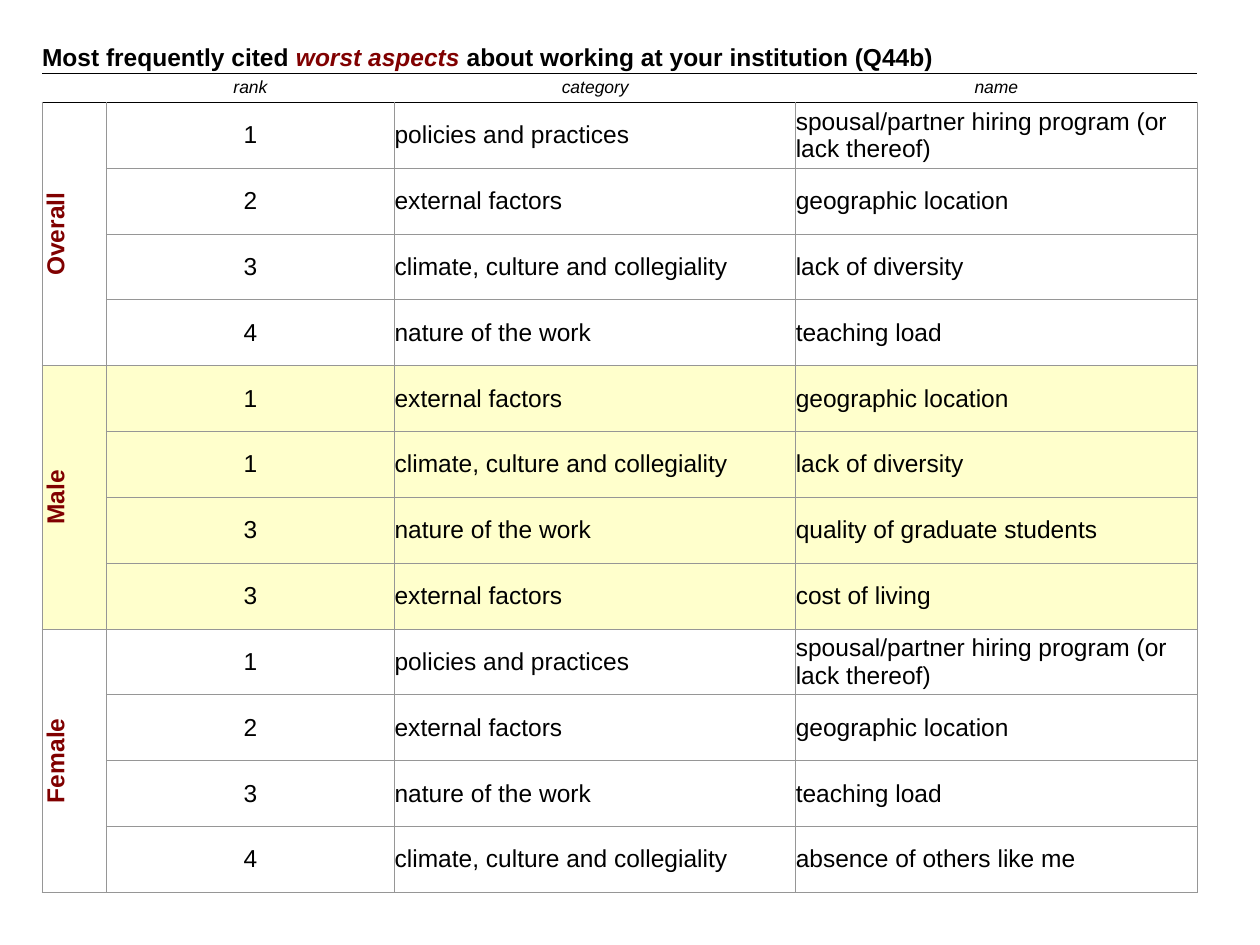
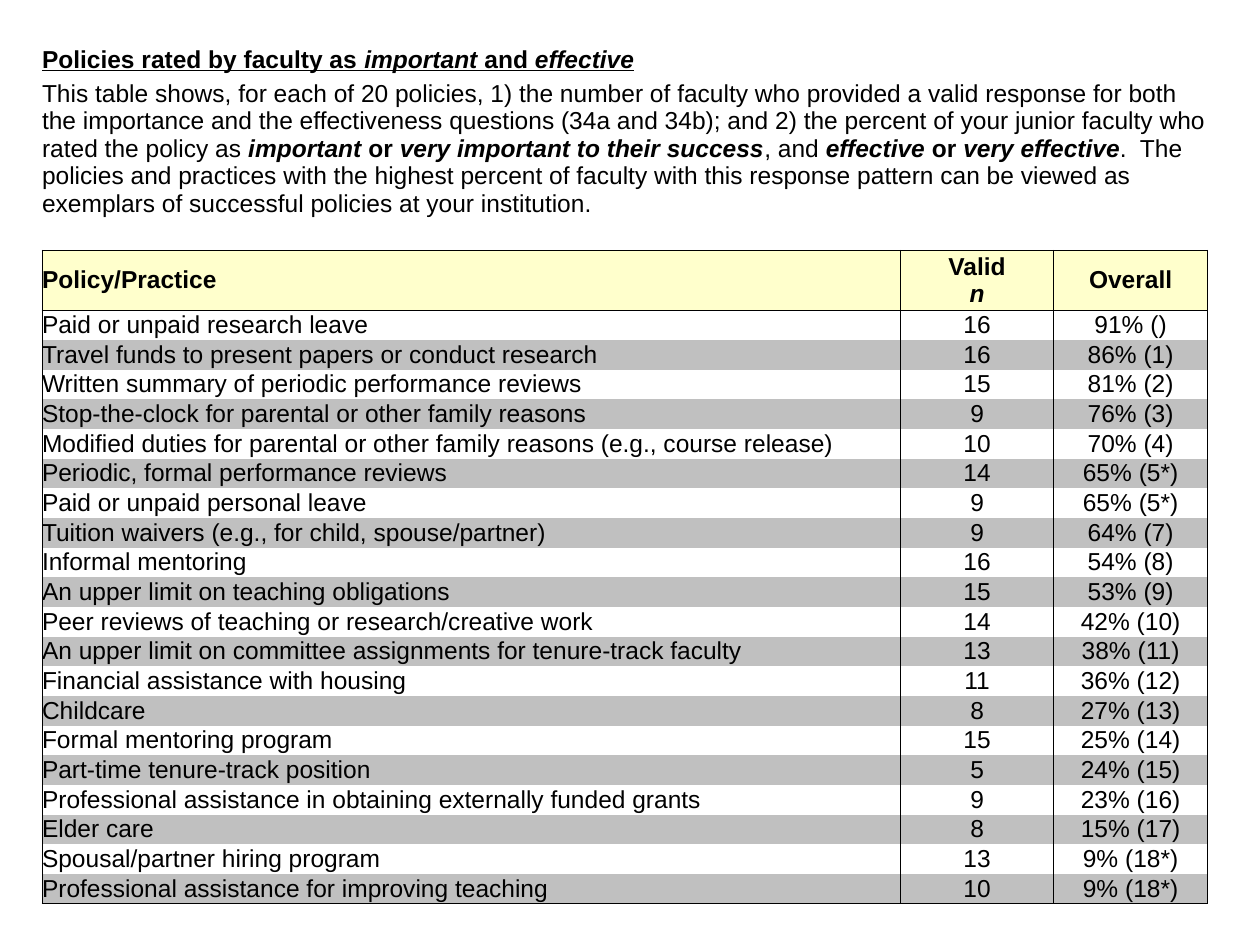
from dataclasses import dataclass, field

from lxml import etree
from pptx import Presentation
from pptx import util as u
from pptx.dml import color
from pptx.enum import text
from pptx.oxml import ns


@dataclass(frozen=True)
class Theme:
    font: str = "Arial"
    black: str = "000000"
    maroon: str = "800000"
    rule: str = "969696"
    cream: str = "FFFFCC"
    band: str = "C0C0C0"
    body: float = 14
    small: float = 10
    line: float = 0.5
    margin: float = 24
    style: str = "{2D5ABB26-0587-4C30-8999-92F81FD0307C}"


THEME = Theme()
BOLD = {"bold": True}
ITALIC = {"italic": True}
BOLD_ITALIC = BOLD | ITALIC


@dataclass(frozen=True)
class Run:
    text: str
    fmt: dict = field(default_factory=dict)
    ink: str = THEME.black


@dataclass(frozen=True)
class Cell:
    runs: tuple[Run, ...] = ()
    borders: dict[str, str] = field(default_factory=dict)
    fill: str | None = None
    center: bool = False
    size: float = THEME.body
    span: tuple[int, int] = (1, 1)
    vert: str | None = None


@dataclass(frozen=True)
class Grid:
    cols: list[float]
    heights: list[float]
    rows: list[list[Cell]]


def edges(sides: str, ink: str) -> dict[str, str]:
    return dict.fromkeys(sides, ink)


def draw_borders(tc_pr: etree._Element, borders: dict[str, str]) -> None:
    for side in "LRTB":
        ln = etree.SubElement(tc_pr, ns.qn(f"a:ln{side}"), w=str(u.Pt(THEME.line)))
        if side in borders:
            fill = etree.SubElement(ln, ns.qn("a:solidFill"))
            etree.SubElement(fill, ns.qn("a:srgbClr"), val=borders[side])
        else:
            etree.SubElement(ln, ns.qn("a:noFill"))


def draw_cell(c, cell: Cell) -> None:
    layout = dict.fromkeys(("margin_left", "margin_right", "margin_top", "margin_bottom"), u.Pt(0))
    layout["vertical_anchor"] = text.MSO_ANCHOR.MIDDLE
    for name, value in layout.items():
        setattr(c, name, value)
    tc_pr = c._tc.get_or_add_tcPr()
    if cell.vert:
        tc_pr.set("vert", cell.vert)
    draw_borders(tc_pr, cell.borders)
    if cell.fill:
        c.fill.solid()
        c.fill.fore_color.rgb = color.RGBColor.from_string(cell.fill)
    else:
        c.fill.background()

    p = c.text_frame.paragraphs[0]
    p.alignment = text.PP_ALIGN.CENTER if cell.center else text.PP_ALIGN.LEFT
    base = {"name": THEME.font, "size": u.Pt(cell.size), "bold": False, "italic": False}
    for i, run in enumerate(cell.runs):
        if i and cell.runs[i - 1].text == "Valid":
            p.add_line_break()
        r = p.add_run()
        r.text = run.text
        for name, value in (base | run.fmt).items():
            setattr(r.font, name, value)
        r.font.color.rgb = color.RGBColor.from_string(run.ink)
    if not cell.runs:
        etree.SubElement(p._p, ns.qn("a:endParaRPr"), sz=str(int(cell.size * 100)))


def draw_grid(prs, grid: Grid) -> None:
    s = prs.slides.add_slide(prs.slide_layouts[6])
    sp = s.shapes.add_table(
        len(grid.rows), len(grid.cols), u.Pt(THEME.margin), u.Pt(THEME.margin),
        u.Pt(sum(grid.cols)), u.Pt(sum(grid.heights)))
    tbl = sp.table
    for flag in ("first_row", "horz_banding"):
        setattr(tbl, flag, False)
    tbl._tbl.tblPr.find(ns.qn("a:tableStyleId")).text = THEME.style
    for col, width in zip(tbl.columns, grid.cols):
        col.width = u.Pt(width)
    for row, height in zip(tbl.rows, grid.heights):
        row.height = u.Pt(height)
    for y, row in enumerate(grid.rows):
        for x, cell in enumerate(row):
            draw_cell(tbl.cell(y, x), cell)
            down, across = cell.span
            if down * across > 1:
                tbl.cell(y, x).merge(tbl.cell(y + down - 1, x + across - 1))


GROUPS = {
    "Overall": [
        ("1", "policies and practices", "spousal/partner hiring program (or lack thereof)"),
        ("2", "external factors", "geographic location"),
        ("3", "climate, culture and collegiality", "lack of diversity"),
        ("4", "nature of the work", "teaching load"),
    ],
    "Male": [
        ("1", "external factors", "geographic location"),
        ("1", "climate, culture and collegiality", "lack of diversity"),
        ("3", "nature of the work", "quality of graduate students"),
        ("3", "external factors", "cost of living"),
    ],
    "Female": [
        ("1", "policies and practices", "spousal/partner hiring program (or lack thereof)"),
        ("2", "external factors", "geographic location"),
        ("3", "nature of the work", "teaching load"),
        ("4", "climate, culture and collegiality", "absence of others like me"),
    ],
}

POLICIES = [
    ("Paid or unpaid research leave", "16", "91% ()"),
    ("Travel funds to present papers or conduct research", "16", "86% (1)"),
    ("Written summary of periodic performance reviews", "15", "81% (2)"),
    ("Stop-the-clock for parental or other family reasons", "9", "76% (3)"),
    ("Modified duties for parental or other family reasons (e.g., course release)", "10", "70% (4)"),
    ("Periodic, formal performance reviews", "14", "65% (5*)"),
    ("Paid or unpaid personal leave", "9", "65% (5*)"),
    ("Tuition waivers (e.g., for child, spouse/partner)", "9", "64% (7)"),
    ("Informal mentoring", "16", "54% (8)"),
    ("An upper limit on teaching obligations", "15", "53% (9)"),
    ("Peer reviews of teaching or research/creative work", "14", "42% (10)"),
    ("An upper limit on committee assignments for tenure-track faculty", "13", "38% (11)"),
    ("Financial assistance with housing", "11", "36% (12)"),
    ("Childcare", "8", "27% (13)"),
    ("Formal mentoring program", "15", "25% (14)"),
    ("Part-time tenure-track position", "5", "24% (15)"),
    ("Professional assistance in obtaining externally funded grants", "9", "23% (16)"),
    ("Elder care", "8", "15% (17)"),
    ("Spousal/partner hiring program", "13", "9% (18*)"),
    ("Professional assistance for improving teaching", "10", "9% (18*)"),
]


def worst_aspects() -> Grid:
    title = (
        Run("Most frequently cited ", BOLD),
        Run("worst aspects", BOLD_ITALIC, THEME.maroon),
        Run(" about working at your institution (Q44b)", BOLD),
    )
    under = edges("B", THEME.black)
    rows = [[Cell(title, under, span=(1, 4))] + [Cell(borders=under)] * 3]
    rows.append([
        Cell((Run(label, ITALIC),) if label else (), edges("TB", THEME.black),
             center=True, size=THEME.small)
        for label in ("", "rank", "category", "name")])
    for group, entries in GROUPS.items():
        fill = THEME.cream if group == "Male" else None
        for i, entry in enumerate(entries):
            borders = edges("LRTB", THEME.rule)
            if len(rows) == 2:
                borders["T"] = THEME.black
            if i == 0:
                side = Cell((Run(group, BOLD, THEME.maroon),), borders, fill, True,
                            span=(len(entries), 1), vert="vert270")
            else:
                side = Cell(borders=borders, fill=fill)
            rows.append([side] + [
                Cell((Run(value),), borders, fill, center=x == 0)
                for x, value in enumerate(entry)])
    return Grid([36.75, 164.75, 229.25, 229.25], [18, 16.5] + [37.63] * 12, rows)


def rated_policies() -> Grid:
    lined = BOLD | {"underline": True}
    title = (
        Run("Policies rated by faculty as ", lined),
        Run("important", lined | ITALIC),
        Run(" and ", lined),
        Run("effective", lined | ITALIC),
    )
    intro = (
        Run("This table shows, for each of 20 policies, 1) the number of faculty who provided a valid "
            "response for both the importance and the effectiveness questions (34a and 34b); and 2) the "
            "percent of your junior faculty who rated the policy as "),
        Run("important", BOLD_ITALIC),
        Run(" or ", BOLD),
        Run("very important to their success", BOLD_ITALIC),
        Run(", and "),
        Run("effective", BOLD_ITALIC),
        Run(" or ", BOLD),
        Run("very effective", BOLD_ITALIC),
        Run(".  The policies and practices with the highest percent of faculty with this response "
            "pattern can be viewed as exemplars of successful policies at your institution."),
    )
    heads = (
        (Run("Policy/Practice", BOLD),),
        (Run("Valid", BOLD), Run("n", BOLD_ITALIC)),
        (Run("Overall", BOLD),),
    )
    rows = [[Cell(runs, span=(1, 3)), Cell(), Cell()] for runs in (title, intro)]
    rows.append([Cell(borders=edges("B", THEME.black))] * 3)
    rows.append([
        Cell(runs, edges("LRTB", THEME.black), THEME.cream, center=x > 0)
        for x, runs in enumerate(heads)])
    for i, policy in enumerate(POLICIES):
        sides = "LR" + "T" * (i == 0) + "B" * (i == len(POLICIES) - 1)
        rows.append([
            Cell((Run(value),), edges(sides, THEME.black), THEME.band if i % 2 else None, center=x > 0)
            for x, value in enumerate(policy)])
    return Grid([490.5, 87.75, 87.75], [20, 82, 16.5, 34.25] + [16.96] * len(POLICIES), rows)


def main() -> None:
    prs = Presentation()
    prs.slide_width, prs.slide_height = u.Pt(720), u.Pt(540)
    for grid in (worst_aspects(), rated_policies()):
        draw_grid(prs, grid)
    prs.save("out.pptx")


if __name__ == "__main__":
    main()
